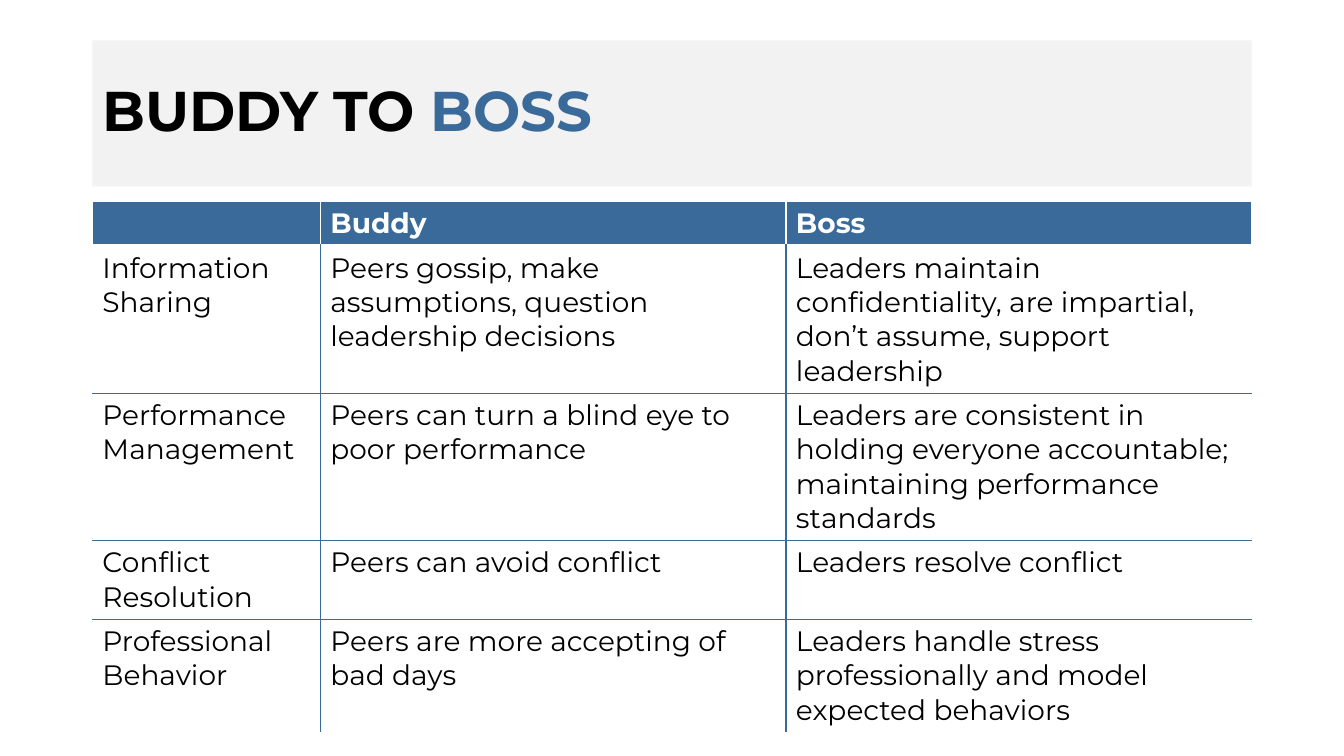
from lxml.etree import SubElement
from pptx import Presentation
from pptx.dml.color import RGBColor
from pptx.enum.text import MSO_ANCHOR, PP_ALIGN
from pptx.oxml.ns import qn
from pptx.util import Pt

FONT = "Montserrat"
BLUE, WHITE, BLACK, GREY = "3A6A9A", "FFFFFF", "000000", "E7E6E6"
TITLE = [("BUDDY TO ", BLACK), ("BOSS", BLUE)]
ROWS = [
    ("", "Buddy", "Boss"),
    ("Information Sharing",
     "Peers gossip, make assumptions, question leadership decisions",
     "Leaders maintain confidentiality, are impartial, don’t assume, support leadership"),
    ("Performance Management",
     "Peers can turn a blind eye to poor performance",
     "Leaders are consistent in holding everyone accountable; maintaining performance standards"),
    ("Conflict Resolution", "Peers can avoid conflict", "Leaders resolve conflict"),
    ("Professional Behavior",
     "Peers are more accepting of bad days",
     "Leaders handle stress professionally and model expected behaviors"),
]
LEFT, WIDTH = 66, 828
TITLE_TOP, TITLE_HEIGHT = 28.8, 104.4
TABLE_TOP, ROW_HEIGHT = 144, 29.5
COLUMN_WIDTHS = [162.8, 332.6, 332.6]


def rgb(value):
    return RGBColor.from_string(value)


def set_font(font, size, color, bold):
    font.name, font.size, font.bold = FONT, Pt(size), bold
    font.color.rgb = rgb(color)


def add_border(cell, side, color, width):
    line = SubElement(cell._tc.get_or_add_tcPr(), qn(f"a:{side}"), w=str(Pt(width)))
    fill = SubElement(line, qn("a:solidFill"))
    SubElement(fill, qn("a:srgbClr"), val=color)


def add_borders(cell, row, column):
    """White on the outside and around the header, blue between body cells."""
    last_row, last_column = len(ROWS) - 1, len(COLUMN_WIDTHS) - 1
    inner = {
        "lnL": row > 0 and column > 0,
        "lnR": row > 0 and column < last_column,
        "lnT": row > 1,
        "lnB": 0 < row < last_row,
    }
    for side, is_inner in inner.items():
        header_base = (row, side) in [(0, "lnB"), (1, "lnT")]
        add_border(cell, side, BLUE if is_inner else WHITE, 3 if header_base else 1)


def add_title(page):
    title = page.shapes.title
    title.left, title.top = Pt(LEFT), Pt(TITLE_TOP)
    title.width, title.height = Pt(WIDTH), Pt(TITLE_HEIGHT)
    title.fill.solid()
    title.fill.fore_color.rgb = rgb(GREY)
    fill_color = title._element.spPr.find(f"{qn('a:solidFill')}/{qn('a:srgbClr')}")
    SubElement(fill_color, qn("a:alpha"), val="50000")
    title.text_frame.vertical_anchor = MSO_ANCHOR.MIDDLE
    para = title.text_frame.paragraphs[0]
    para.alignment, para.line_spacing = PP_ALIGN.LEFT, 0.9
    for text, color in TITLE:
        span = para.add_run()
        span.text = text
        set_font(span.font, 40, color, True)


def add_comparison(page):
    table = page.shapes.add_table(
        len(ROWS), len(COLUMN_WIDTHS), Pt(LEFT), Pt(TABLE_TOP),
        Pt(WIDTH), Pt(ROW_HEIGHT * len(ROWS))).table
    table.horz_banding = False
    for column, width in zip(table.columns, COLUMN_WIDTHS):
        column.width = Pt(width)
    for row, texts in enumerate(ROWS):
        table.rows[row].height = Pt(ROW_HEIGHT)
        is_header = row == 0
        for column, text in enumerate(texts):
            cell = table.cell(row, column)
            cell.text = text
            set_font(cell.text_frame.paragraphs[0].font, 20,
                     WHITE if is_header else BLACK, is_header)
            add_borders(cell, row, column)
            if is_header:
                cell.fill.solid()
                cell.fill.fore_color.rgb = rgb(BLUE)
            else:
                cell.fill.background()


def main():
    deck = Presentation()
    deck.slide_width, deck.slide_height = Pt(960), Pt(540)
    page = deck.slides.add_slide(deck.slide_layouts[5])
    add_title(page)
    add_comparison(page)
    deck.save("out.pptx")


if __name__ == "__main__":
    main()
